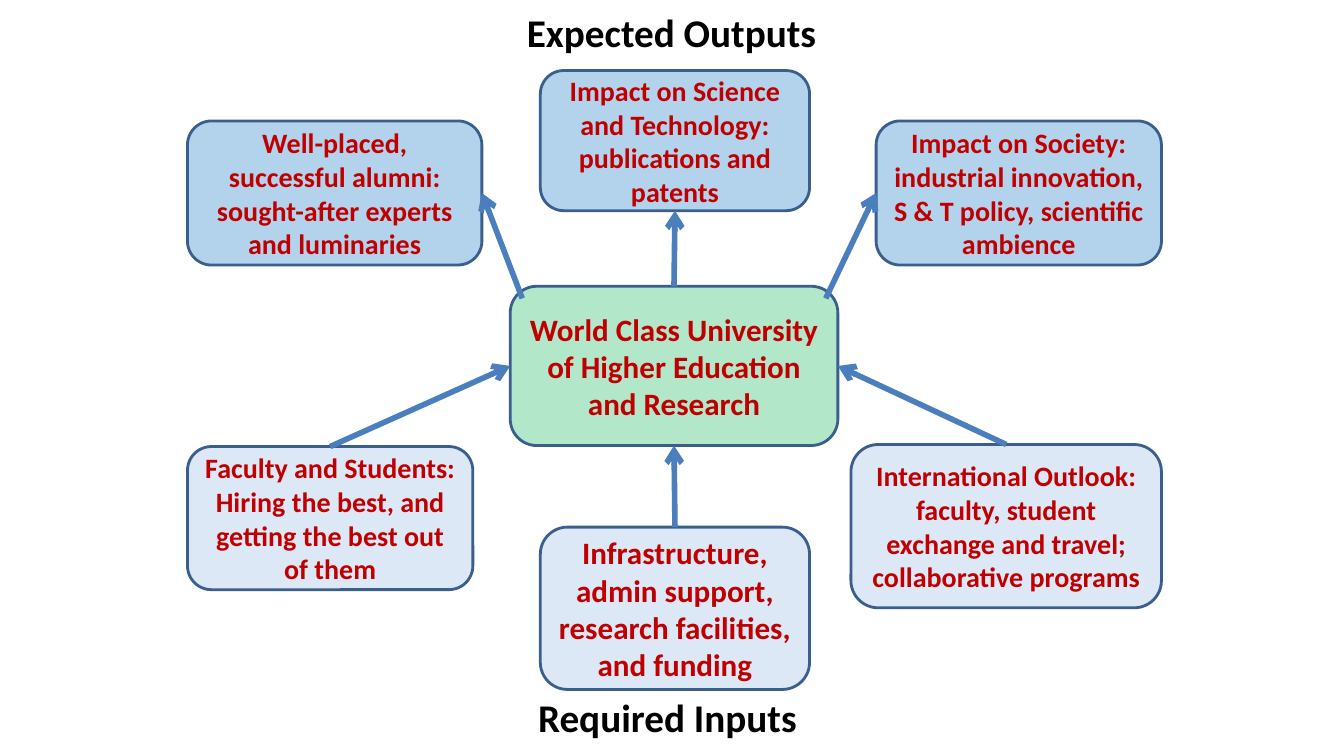
from dataclasses import dataclass

from lxml.etree import SubElement
from pptx import Presentation
from pptx.dml.color import RGBColor
from pptx.enum.shapes import MSO_CONNECTOR, MSO_SHAPE
from pptx.enum.text import MSO_ANCHOR, PP_ALIGN
from pptx.oxml.ns import qn
from pptx.util import Inches, Pt

GREEN = RGBColor(0x00, 0xB0, 0x50)
PALE_BLUE = RGBColor(0x8E, 0xB4, 0xE3)
BLUE = RGBColor(0x00, 0x70, 0xC0)
OUTLINE = RGBColor(0x3A, 0x5F, 0x8C)
ARROW = RGBColor(0x4B, 0x7E, 0xBC)
RED = RGBColor(0xC0, 0x00, 0x00)
BLACK = RGBColor(0x00, 0x00, 0x00)
TOP, LEFT, BOTTOM, RIGHT = range(4)
CORNER_INSET = Inches(0.12)

OUTPUTS = [
    ((0, 45.63, 30.23, 54.37), 20,
     "Well-placed, successful alumni: sought-after experts and luminaries"),
    ((36.23, 26.62, 27.64, 52.85), 20,
     "Impact on Science and Technology: publications and patents"),
    ((70.7, 45.63, 29.3, 54.37), 20,
     "Impact on Society: industrial innovation, S & T policy, scientific ambience"),
]
INPUTS = [
    ((0, 0.67, 29.3, 47.33), 20,
     "Faculty and Students: Hiring the best, and getting the best out of them"),
    ((36.23, 27.33, 27.64, 53.67), 22.2,
     "Infrastructure, admin support, research facilities, and funding"),
    ((68.12, 0, 31.88, 54), 20,
     "International Outlook: faculty, student exchange and travel; collaborative programs"),
]


@dataclass
class Box:
    """A rectangle on the slide."""
    left: int
    top: int
    width: int
    height: int

    def inner(self, left, top, width, height):
        """Return the inner box given as percentages of this one."""
        return Box(int(self.left + self.width * left / 100),
                   int(self.top + self.height * top / 100),
                   int(self.width * width / 100),
                   int(self.height * height / 100))

    def bounds(self):
        """Return left, top, width and height."""
        return self.left, self.top, self.width, self.height


def write_text(shape, text, size, color):
    """Put centred bold text in a shape."""
    frame = shape.text_frame
    frame.word_wrap = True
    frame.text = text
    para = frame.paragraphs[0]
    para.alignment = PP_ALIGN.CENTER
    font = para.runs[0].font
    font.name, font.size, font.bold = "Calibri", Pt(size), True
    font.color.rgb = color


def draw_card(page, box, fill, size, text):
    """Draw a rounded card with a translucent fill."""
    card = page.shapes.add_shape(MSO_SHAPE.ROUNDED_RECTANGLE, *box.bounds())
    card.shadow.inherit = False
    card.fill.solid()
    card.fill.fore_color.rgb = fill
    tint = card.element.spPr.find(qn("a:solidFill")).find(qn("a:srgbClr"))
    SubElement(tint, qn("a:alpha"), val="30000")
    card.line.color.rgb = OUTLINE
    card.line.width = Pt(2)
    card.text_frame.vertical_anchor = MSO_ANCHOR.MIDDLE
    write_text(card, text, size, RED)
    return card


def draw_region(page, box, fill, cards, heading, heading_share):
    """Draw a heading and its cards inside a region and return the cards."""
    title = page.shapes.add_textbox(*box.inner(*heading_share).bounds())
    write_text(title, heading, 28, BLACK)
    return [draw_card(page, box.inner(*share), fill, size, text)
            for share, size, text in cards]


def draw_arrow(page, target, side, source=None, source_side=TOP, start=(0, 0)):
    """Draw an arrow to a card side from another card or a start point."""
    arrow = page.shapes.add_connector(MSO_CONNECTOR.STRAIGHT, *start, *start)
    if source is not None:
        arrow.begin_connect(source, source_side)
    arrow.end_connect(target, side)
    arrow.line.color.rgb = ARROW
    arrow.line.width = Pt(4)
    outline = arrow.element.spPr.find(qn("a:ln"))
    SubElement(outline, qn("a:tailEnd"), type="arrow")
    SubElement(arrow.element.spPr, qn("a:effectLst"))


def draw_flows(page, hub, outputs, inputs):
    """Link the inputs to the hub and the hub to the outputs."""
    alumni, science, society = outputs
    corner_top = hub.top + CORNER_INSET
    draw_arrow(page, science, BOTTOM, hub)
    draw_arrow(page, alumni, RIGHT, start=(hub.left + CORNER_INSET, corner_top))
    draw_arrow(page, society, LEFT,
               start=(hub.left + hub.width - CORNER_INSET, corner_top))
    for card, side in zip(inputs, (LEFT, BOTTOM, RIGHT)):
        draw_arrow(page, hub, side, card)


def main():
    """Build the deck with its single diagram slide."""
    deck = Presentation()
    deck.slide_width, deck.slide_height = Inches(13.33), Inches(7.5)
    page = deck.slides.add_slide(deck.slide_layouts[6])
    slide = Box(0, 0, deck.slide_width, deck.slide_height)
    hub = draw_card(page, slide.inner(37.96, 37.87, 24.38, 21.07), GREEN, 22.2,
                    "World Class University of Higher Education and Research")
    outputs = draw_region(page, slide.inner(13.95, 0, 72.47, 35.07), BLUE, OUTPUTS,
                          "Expected Outputs", (33.75, 1.14, 31.88, 19.01))
    inputs = draw_region(page, slide.inner(13.95, 58.8, 72.47, 40), PALE_BLUE, INPUTS,
                         "Required Inputs", (33.33, 80.67, 31.88, 16.67))
    draw_flows(page, hub, outputs, inputs)
    deck.save("out.pptx")


if __name__ == "__main__":
    main()
